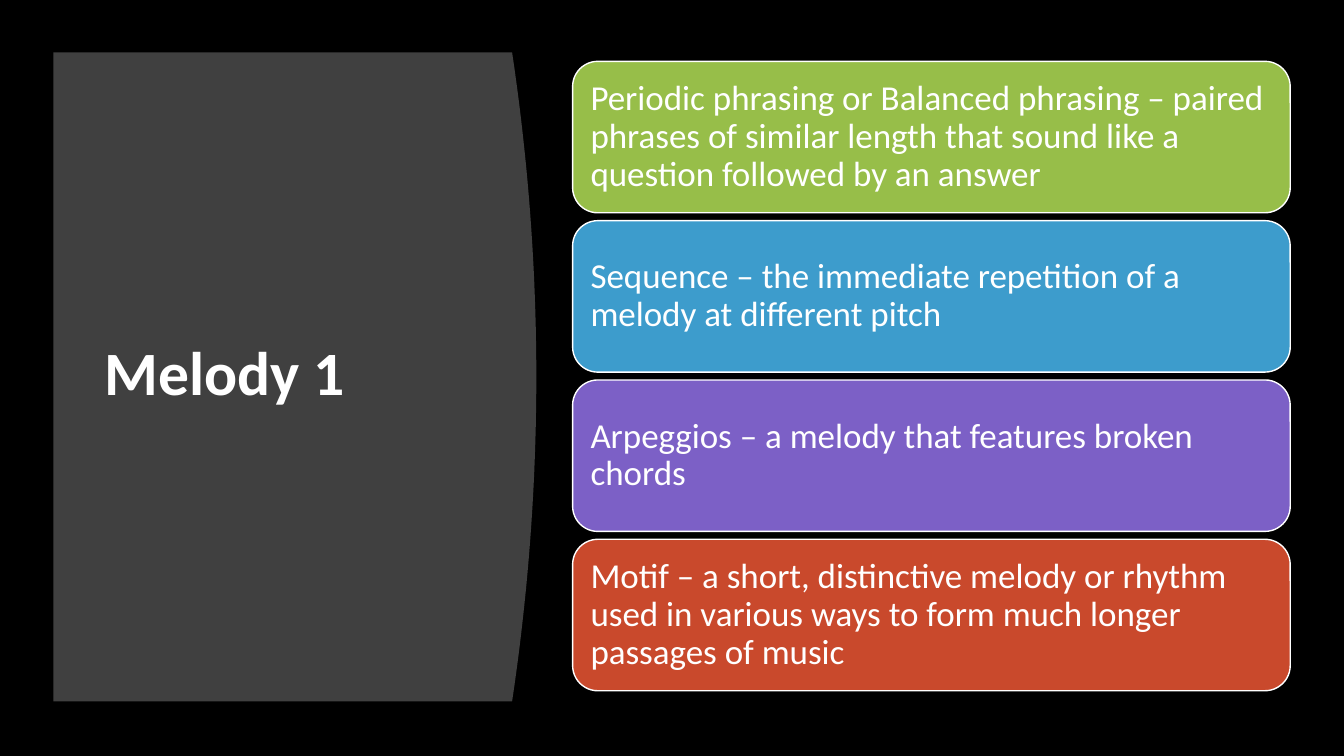
from pptx import Presentation
from pptx.dml.color import RGBColor
from pptx.enum import shapes, text
from pptx.util import Pt

BLACK = RGBColor(0x00, 0x00, 0x00)
WHITE = RGBColor(0xFF, 0xFF, 0xFF)
GRAY = RGBColor(0x40, 0x40, 0x40)
GREEN = RGBColor(0x97, 0xBE, 0x49)
BLUE = RGBColor(0x3D, 0x9C, 0xCC)
PURPLE = RGBColor(0x7C, 0x60, 0xC6)
RED = RGBColor(0xC9, 0x49, 0x2C)

FONT = "Calibri"
TERMS = [
    (GREEN, "Periodic phrasing or Balanced phrasing – paired phrases of similar "
            "length that sound like a question followed by an answer"),
    (BLUE, "Sequence – the immediate repetition of a melody at different pitch"),
    (PURPLE, "Arpeggios – a melody that features broken chords"),
    (RED, "Motif – a short, distinctive melody or rhythm used in various ways "
          "to form much longer passages of music"),
]


def write(shape, words, size, bold=False):
    frame = shape.text_frame
    frame.word_wrap = True
    frame.auto_size = text.MSO_AUTO_SIZE.NONE
    frame.vertical_anchor = text.MSO_ANCHOR.MIDDLE
    frame.text = words
    para = frame.paragraphs[0]
    para.alignment = text.PP_ALIGN.LEFT
    para.line_spacing = 0.9
    font = para.font
    font.name, font.size, font.bold = FONT, Pt(size), bold
    font.color.rgb = WHITE
    return frame


def add_panel(slide):
    # The right edge is a shallow parabola
    left, top, edge, bottom, bulge, steps = 38.2, 37.4, 365.8, 501.1, 17.3, 40
    curve = []
    for i in range(steps + 1):
        t = i / steps
        x = edge + bulge * 4 * t * (1 - t)
        curve.append((Pt(x), Pt(top + (bottom - top) * t)))
    pen = slide.shapes.build_freeform(Pt(left), Pt(top))
    pen.add_line_segments(curve + [(Pt(left), Pt(bottom))], close=True)
    panel = pen.convert_to_shape()
    panel.shadow.inherit = False
    panel.fill.solid()
    panel.fill.fore_color.rgb = GRAY
    panel.line.fill.background()
    return panel


def set_title(slide, panel, words):
    title = slide.shapes.title
    title.left, title.top = Pt(67.7), Pt(79.9)
    title.width, title.height = Pt(269.3), Pt(377.3)
    write(title, words, 44, bold=True)
    # Bring the title in front of the panel
    panel._element.addnext(title._element)


def add_bar(slide, top, color, words):
    bar = slide.shapes.add_shape(shapes.MSO_SHAPE.ROUNDED_RECTANGLE,
                                 Pt(409), Pt(top), Pt(512.6), Pt(108.2))
    bar.shadow.inherit = False
    bar.fill.solid()
    bar.fill.fore_color.rgb = color
    bar.line.color.rgb = WHITE
    bar.line.width = Pt(1)
    frame = write(bar, words, 25)
    frame.margin_left = frame.margin_right = Pt(7.5)
    frame.margin_top = frame.margin_bottom = Pt(7.5)


def main():
    deck = Presentation()
    deck.slide_width, deck.slide_height = Pt(960), Pt(540)
    slide = deck.slides.add_slide(deck.slide_layouts[5])
    slide.background.fill.solid()
    slide.background.fill.fore_color.rgb = BLACK

    # Title panel
    panel = add_panel(slide)
    set_title(slide, panel, "Melody 1")

    # Stack of terms
    for i, (color, words) in enumerate(TERMS):
        add_bar(slide, 43.8 + 113.8 * i, color, words)

    deck.save("out.pptx")


if __name__ == "__main__":
    main()
